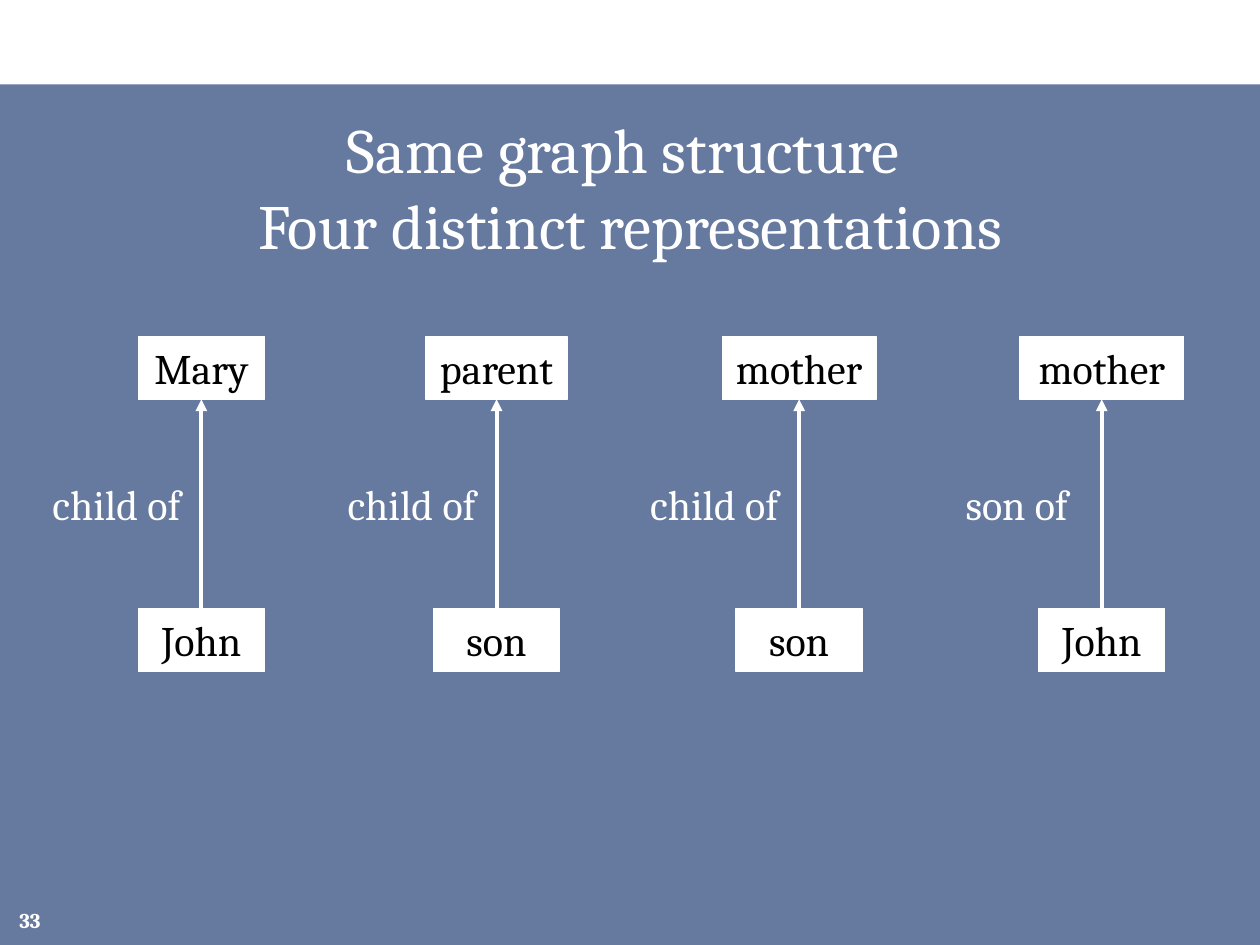
from lxml import etree
from pptx import Presentation
from pptx.dml.color import RGBColor
from pptx.enum import shapes, text
from pptx.oxml.ns import qn
from pptx.util import Cm, Pt

WHITE, BLACK, NAVY = "FFFFFF", "000000", "002060"
FONT = "Cambria"
NODE_W, NODE_H = 2.54, 1.27
LABEL_W, LABEL_OFFSET = 3.3, 3.36


def color(value):
    return RGBColor.from_string(value)


def write(shape, content, size=24, fill=WHITE, bold=False,
          align=text.PP_ALIGN.CENTER, anchor=text.MSO_ANCHOR.TOP):
    tf = shape.text_frame
    tf.word_wrap = True
    tf.auto_size = text.MSO_AUTO_SIZE.NONE
    tf.vertical_anchor = anchor
    p = tf.paragraphs[0]
    p.text = content
    p.alignment = align
    for r in p.runs:
        r.font.name, r.font.size, r.font.bold = FONT, Pt(size), bold
        r.font.color.rgb = color(fill)


def add_rect(slide, left, top, width, height, fill):
    sp = slide.shapes.add_shape(shapes.MSO_SHAPE.RECTANGLE,
                                Cm(left), Cm(top), Cm(width), Cm(height))
    sp.shadow.inherit = False
    sp.fill.solid()
    sp.fill.fore_color.rgb = color(fill)
    return sp


def add_label(slide, left, top, width, height, content, **style):
    box = slide.shapes.add_textbox(Cm(left), Cm(top), Cm(width), Cm(height))
    write(box, content, **style)


def add_node(slide, center, top, width, content):
    sp = add_rect(slide, center - width / 2, top, width, NODE_H, WHITE)
    sp.line.color.rgb = color(WHITE)
    sp.line.width = Pt(0.75)
    write(sp, content, fill=BLACK)


def add_arrow(slide, x, start, end):
    line = slide.shapes.add_connector(shapes.MSO_CONNECTOR.STRAIGHT,
                                      Cm(x), Cm(start), Cm(x), Cm(end))
    line.line.color.rgb = color(WHITE)
    line.line.width = Pt(2.25)
    etree.SubElement(line.line._get_or_add_ln(), qn("a:tailEnd"), type="triangle")
    etree.SubElement(line._element.spPr, qn("a:effectLst"))


def add_background(slide, top, width, height):
    panel = add_rect(slide, 0, top, width, height, NAVY)
    panel.line.fill.background()
    # 60 % opacity
    srgb = panel.fill._xPr.find(".//" + qn("a:srgbClr"))
    etree.SubElement(srgb, qn("a:alpha"), val="60000")
    # Behind the title
    slide.shapes._spTree.insert(2, panel._element)


def add_title(slide, left, top, width, height, content):
    title = slide.shapes.title
    title.left, title.top = Cm(left), Cm(top)
    title.width, title.height = Cm(width), Cm(height)
    write(title, content, size=36)


def add_relation(slide, center, top, height, parent, relation, child, parent_width):
    """Parent node above, child node below, labelled arrow between them."""
    child_top = top + height - NODE_H
    add_node(slide, center, child_top, NODE_W, child)
    add_node(slide, center, top, parent_width, parent)
    add_arrow(slide, center, child_top, top + NODE_H)
    add_label(slide, center - LABEL_OFFSET, top + 2.74, LABEL_W, NODE_H, relation)


def main():
    prs = Presentation()
    prs.slide_width, prs.slide_height = Cm(25.4), Cm(19.05)
    slide = prs.slides.add_slide(prs.slide_layouts[5])

    # Background panel, title and slide number
    add_background(slide, 1.7, 25.4, 17.35)
    add_title(slide, 0.64, 2.11, 24.13, 2.11,
              "Same graph structure \vFour distinct representations")
    add_label(slide, -0.2, 18.03, 1.27, 1.02, "33", size=12, bold=True,
              align=text.PP_ALIGN.RIGHT, anchor=text.MSO_ANCHOR.MIDDLE)

    # Four graphs: axis, parent, relation, child, width of parent node
    relations = [
        (4.06, "Mary", "child of", "John", NODE_W),
        (10.01, "parent", "child of", "son", 2.84),
        (16.11, "mother", "child of", "son", 3.1),
        (22.21, "mother", "son of", "John", 3.3),
    ]
    for center, *parts in relations:
        add_relation(slide, center, 6.78, 6.76, *parts)

    prs.save("out.pptx")


if __name__ == "__main__":
    main()
